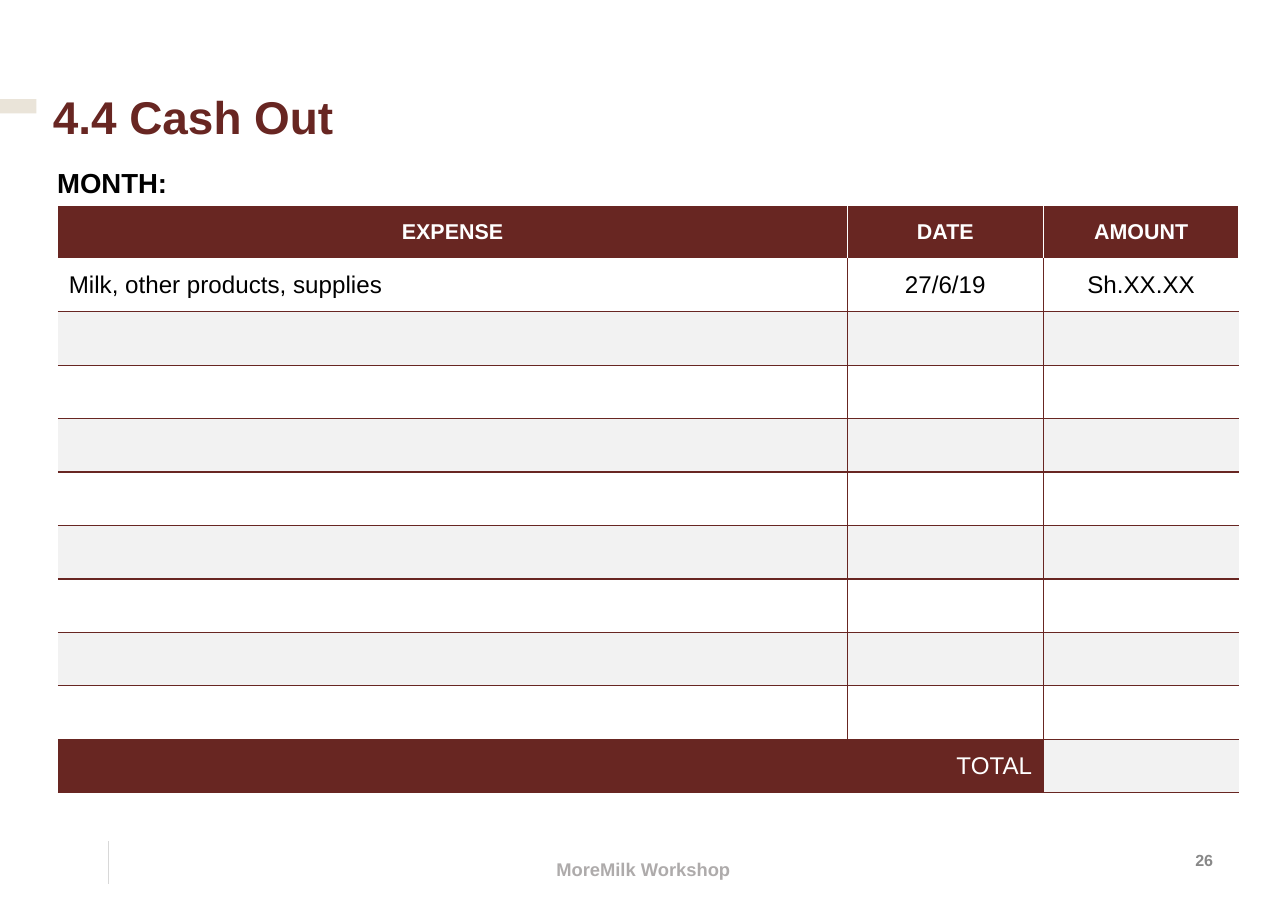
"""Build the Cash Out ledger slide."""
from dataclasses import dataclass

from lxml.etree import SubElement
from pptx import Presentation
from pptx.dml.color import RGBColor
from pptx.enum.shapes import MSO_CONNECTOR, MSO_SHAPE
from pptx.enum.text import MSO_ANCHOR, MSO_AUTO_SIZE, PP_ALIGN
from pptx.oxml.ns import qn
from pptx.util import Pt

TITLE = "4.4 Cash Out"
MONTH = "MONTH:"
FOOTER = "MoreMilk Workshop"
PAGE = "26"
HEADERS = ["EXPENSE", "DATE", "AMOUNT"]
EXAMPLE = ["Milk, other products, supplies", "27/6/19", "Sh.XX.XX"]
TOTAL = "TOTAL"
BLANK_ROWS = 8

SLIDE_SIZE = (841.68, 595.44)
TABLE_LEFT, TABLE_TOP = 37.8, 133.9
COLUMN_WIDTHS = [516, 128, 128]
ROW_HEIGHT = 34.95
SIDES = ("L", "R", "T", "B")


@dataclass(frozen=True)
class Theme:
    """Colours and type sizes of the slide."""
    font: str = "Arial"
    maroon: str = "682622"
    white: str = "FFFFFF"
    black: str = "000000"
    band: str = "F2F2F2"
    sand: str = "EAE4D9"
    rule: str = "D8D8D8"
    footer: str = "AEABAB"
    page: str = "888888"
    title_size: float = 30
    month_size: float = 18
    header_size: float = 14
    body_size: float = 15.8
    footer_size: float = 12
    page_size: float = 10.5


THEME = Theme()


def write(frame, text, size, color, bold=True, align=PP_ALIGN.LEFT):
    """Add one formatted run to the first paragraph."""
    paragraph = frame.paragraphs[0]
    paragraph.alignment = align
    run = paragraph.add_run()
    run.text = text
    run.font.name = THEME.font
    run.font.size = Pt(size)
    run.font.bold = bold
    run.font.color.rgb = RGBColor.from_string(color)
    return paragraph


def place(shape, left, top, width, height):
    """Move and size a shape."""
    shape.left, shape.top = Pt(left), Pt(top)
    shape.width, shape.height = Pt(width), Pt(height)


def add_title(slide):
    """Format the title placeholder."""
    title = slide.shapes.title
    place(title, 20.16, 11.52, 789.84, 81.36)
    frame = title.text_frame
    frame.auto_size = MSO_AUTO_SIZE.NONE
    frame.word_wrap = True
    frame.vertical_anchor = MSO_ANCHOR.TOP
    frame.margin_left, frame.margin_top = Pt(14.4), Pt(42.5)
    frame.margin_right, frame.margin_bottom = Pt(7.2), Pt(3.6)
    paragraph = write(frame, TITLE, THEME.title_size, THEME.maroon)
    paragraph.line_spacing = 1.1


def add_label(slide, box, text, size, color, align, anchor, bottom=3.6):
    """Add a wrapped text box."""
    frame = slide.shapes.add_textbox(*map(Pt, box)).text_frame
    frame.word_wrap = True
    frame.vertical_anchor = anchor
    frame.margin_bottom = Pt(bottom)
    write(frame, text, size, color, align=align)


def add_decoration(slide):
    """Add the title marker and the footer rule."""
    marker = slide.shapes.add_shape(MSO_SHAPE.RECTANGLE, Pt(0), Pt(64.8), Pt(23.76), Pt(9.36))
    marker.shadow.inherit = False
    marker.fill.solid()
    marker.fill.fore_color.rgb = RGBColor.from_string(THEME.sand)
    marker.line.fill.background()
    rule = slide.shapes.add_connector(MSO_CONNECTOR.STRAIGHT, Pt(71), Pt(550), Pt(71), Pt(578))
    rule.line.color.rgb = RGBColor.from_string(THEME.rule)
    rule.line.width = Pt(0.75)
    SubElement(rule._element.spPr, qn("a:effectLst"))


def style_cell(cell, fill, borders):
    """Set the borders, fill and anchor of a cell."""
    properties = cell._tc.get_or_add_tcPr()
    for side in SIDES:
        line = SubElement(properties, qn(f"a:ln{side}"), w=str(Pt(1)))
        if side in borders:
            solid = SubElement(line, qn("a:solidFill"))
            SubElement(solid, qn("a:srgbClr"), val=borders[side])
        else:
            SubElement(line, qn("a:noFill"))
    cell.fill.solid()
    cell.fill.fore_color.rgb = RGBColor.from_string(fill)
    cell.vertical_anchor = MSO_ANCHOR.MIDDLE


def body_borders(row, column):
    """Return the inner and bottom rules of a body cell."""
    shown = {"L": column > 0, "R": column < len(HEADERS) - 1, "T": row > 1, "B": True}
    return {side: THEME.maroon for side in SIDES if shown[side]}


def add_ledger(slide):
    """Add the expense table."""
    row_count = BLANK_ROWS + 3
    table = slide.shapes.add_table(
        row_count, len(HEADERS), Pt(TABLE_LEFT), Pt(TABLE_TOP),
        Pt(sum(COLUMN_WIDTHS)), Pt(ROW_HEIGHT * row_count)).table
    table.first_row = table.horz_banding = False
    for column, width in zip(table.columns, COLUMN_WIDTHS):
        column.width = Pt(width)
    for index, row in enumerate(table.rows):
        row.height = Pt(ROW_HEIGHT)
        for column, cell in enumerate(row.cells):
            if index == 0:
                style_cell(cell, THEME.maroon, dict.fromkeys("LRT", THEME.white))
            else:
                fill = THEME.white if index % 2 else THEME.band
                style_cell(cell, fill, body_borders(index, column))

    for column, (header, example) in enumerate(zip(HEADERS, EXAMPLE)):
        write(table.cell(0, column).text_frame, header, THEME.header_size,
              THEME.white, align=PP_ALIGN.CENTER)
        write(table.cell(1, column).text_frame, example, THEME.body_size, THEME.black,
              bold=False, align=PP_ALIGN.CENTER if column else PP_ALIGN.LEFT)

    total = table.cell(row_count - 1, 0)
    total.merge(table.cell(row_count - 1, 1))
    total.fill.fore_color.rgb = RGBColor.from_string(THEME.maroon)
    write(total.text_frame, TOTAL, THEME.body_size, THEME.white,
          bold=False, align=PP_ALIGN.RIGHT)


def main():
    """Create and save the presentation."""
    presentation = Presentation()
    presentation.slide_width, presentation.slide_height = map(Pt, SLIDE_SIZE)
    slide = presentation.slides.add_slide(presentation.slide_layouts[5])
    add_decoration(slide)
    add_label(slide, (314.64, 546.48, 211.68, 39.6), FOOTER, THEME.footer_size,
              THEME.footer, PP_ALIGN.CENTER, MSO_ANCHOR.MIDDLE, bottom=0)
    add_label(slide, (768.96, 547.92, 36, 28.8), PAGE, THEME.page_size,
              THEME.page, PP_ALIGN.CENTER, MSO_ANCHOR.MIDDLE)
    add_title(slide)
    add_ledger(slide)
    add_label(slide, (30.24, 105.12, 281.52, 28.8), MONTH, THEME.month_size,
              THEME.black, PP_ALIGN.LEFT, MSO_ANCHOR.TOP)
    presentation.save("out.pptx")


if __name__ == "__main__":
    main()
